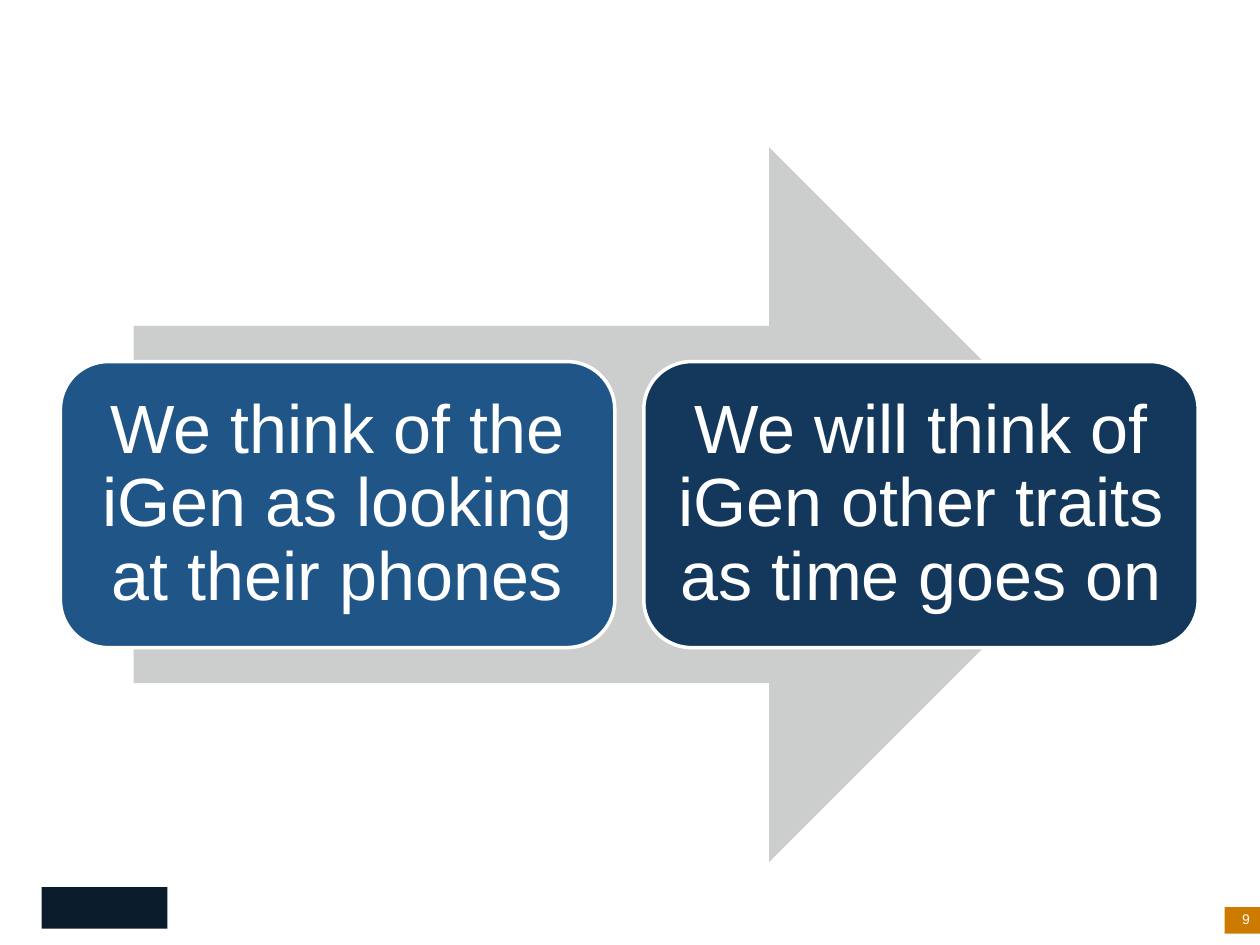
from dataclasses import dataclass

from pptx import Presentation
from pptx.dml.color import RGBColor
from pptx.enum.shapes import MSO_SHAPE
from pptx.enum.text import MSO_ANCHOR, PP_ALIGN
from pptx.util import Inches, Pt

RECTANGLE = MSO_SHAPE.RECTANGLE
ROUNDED = MSO_SHAPE.ROUNDED_RECTANGLE
RIGHT_ARROW = MSO_SHAPE.RIGHT_ARROW
MIDDLE = MSO_ANCHOR.MIDDLE
CENTER, RIGHT = PP_ALIGN.CENTER, PP_ALIGN.RIGHT

COLUMNS, ROWS = 100, 75


@dataclass(frozen=True)
class Theme:
    font: str = "Arial"
    statement_size: float = 39
    number_size: float = 8
    white: str = "FFFFFF"
    arrow: str = "CCCDCD"
    now: str = "205588"
    later: str = "14385C"
    footer: str = "0A1B2B"
    accent: str = "CC7A00"


class SlideBuilder:
    """Draws on one slide; lengths are columns and rows of the grid."""

    def __init__(self, presentation, theme):
        self.theme = theme
        self.slide = presentation.slides.add_slide(presentation.slide_layouts[6])
        self.column = presentation.slide_width / COLUMNS
        self.row = presentation.slide_height / ROWS

    def place(self, left, top, width, height):
        return (round(left * self.column), round(top * self.row),
                round(width * self.column), round(height * self.row))

    def block(self, preset, area, fill):
        block = self.slide.shapes.add_shape(preset, *self.place(*area))
        block.shadow.inherit = False
        block.fill.solid()
        block.fill.fore_color.rgb = RGBColor.from_string(fill)
        block.line.fill.background()
        return block

    def set_text(self, frame, text, size, align, inset, wrap):
        frame.word_wrap = wrap
        frame.vertical_anchor = MIDDLE
        frame.margin_left = frame.margin_right = Inches(inset)
        frame.margin_top = frame.margin_bottom = Inches(inset)
        paragraph = frame.paragraphs[0]
        paragraph.alignment = align
        run = paragraph.add_run()
        run.text = text
        run.font.name = self.theme.font
        run.font.size = Pt(size)
        run.font.color.rgb = RGBColor.from_string(self.theme.white)
        return paragraph

    def card(self, area, fill, statement):
        card = self.block(ROUNDED, area, fill)
        card.line.color.rgb = RGBColor.from_string(self.theme.white)
        card.line.width = Pt(2)
        paragraph = self.set_text(card.text_frame, statement,
                                  self.theme.statement_size, CENTER, 0.16, True)
        paragraph.line_spacing = 0.9

    def page_number(self, area, number):
        box = self.slide.shapes.add_textbox(*self.place(*area))
        self.set_text(box.text_frame, number, self.theme.number_size, RIGHT, 0, False)


def main():
    presentation = Presentation()
    presentation.slide_width = Inches(10)
    presentation.slide_height = Inches(7.5)
    theme = Theme()
    slide = SlideBuilder(presentation, theme)

    # Footer blocks
    slide.block(RECTANGLE, (97.2, 72, 2.8, 2.1), theme.accent)
    slide.block(RECTANGLE, (3.3, 70.4, 10, 3.3), theme.footer)

    # Arrow of time behind the two statements
    slide.block(RIGHT_ARROW, (10.6, 11.7, 78.8, 56.7), theme.arrow)

    # Statements, now and later
    card_left, card_top, card_width, card_height, gap = 4.8, 28.7, 44, 22.7, 2.3
    statements = [
        (theme.now, "We think of the iGen as looking at their phones"),
        (theme.later, "We will think of iGen other traits as time goes on"),
    ]
    for index, (fill, statement) in enumerate(statements):
        left = card_left + index * (card_width + gap)
        slide.card((left, card_top, card_width, card_height), fill, statement)

    # Page number
    slide.page_number((96.9, 71.9, 2.3, 2.1), "9")

    presentation.save("out.pptx")


if __name__ == "__main__":
    main()
